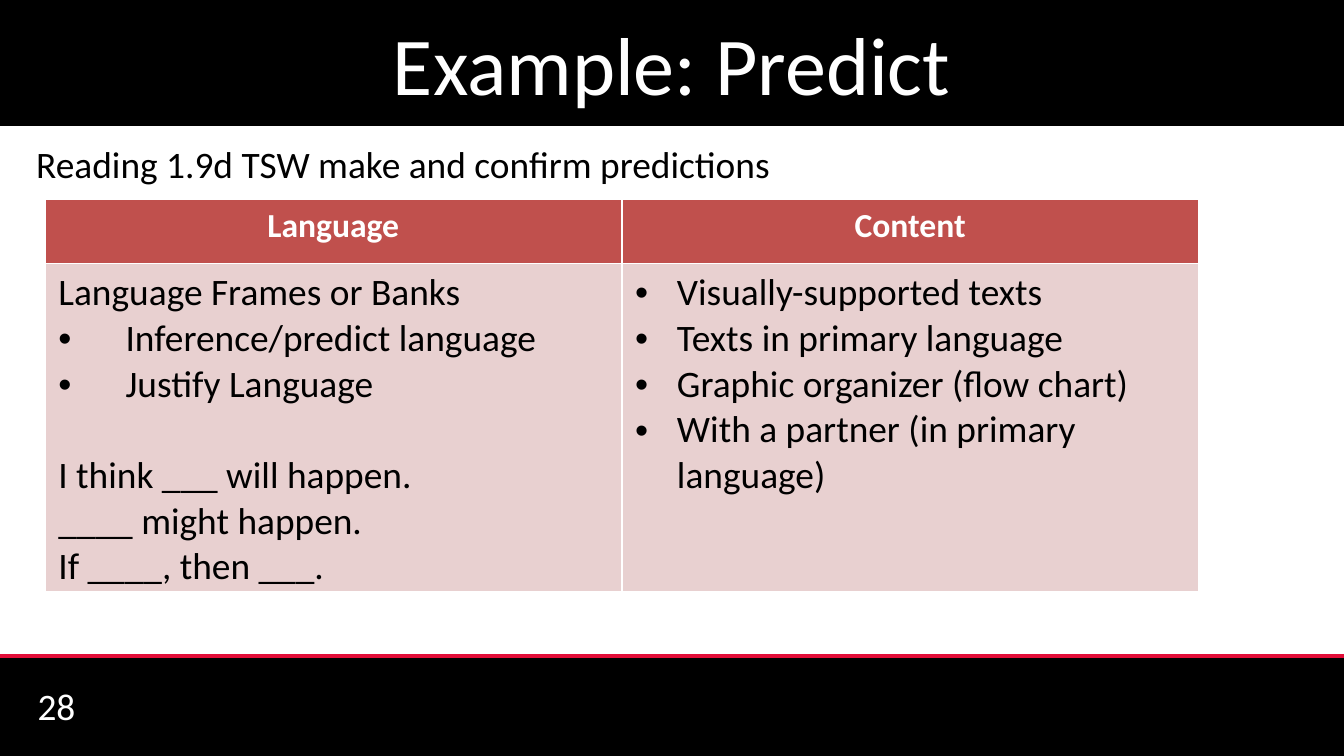
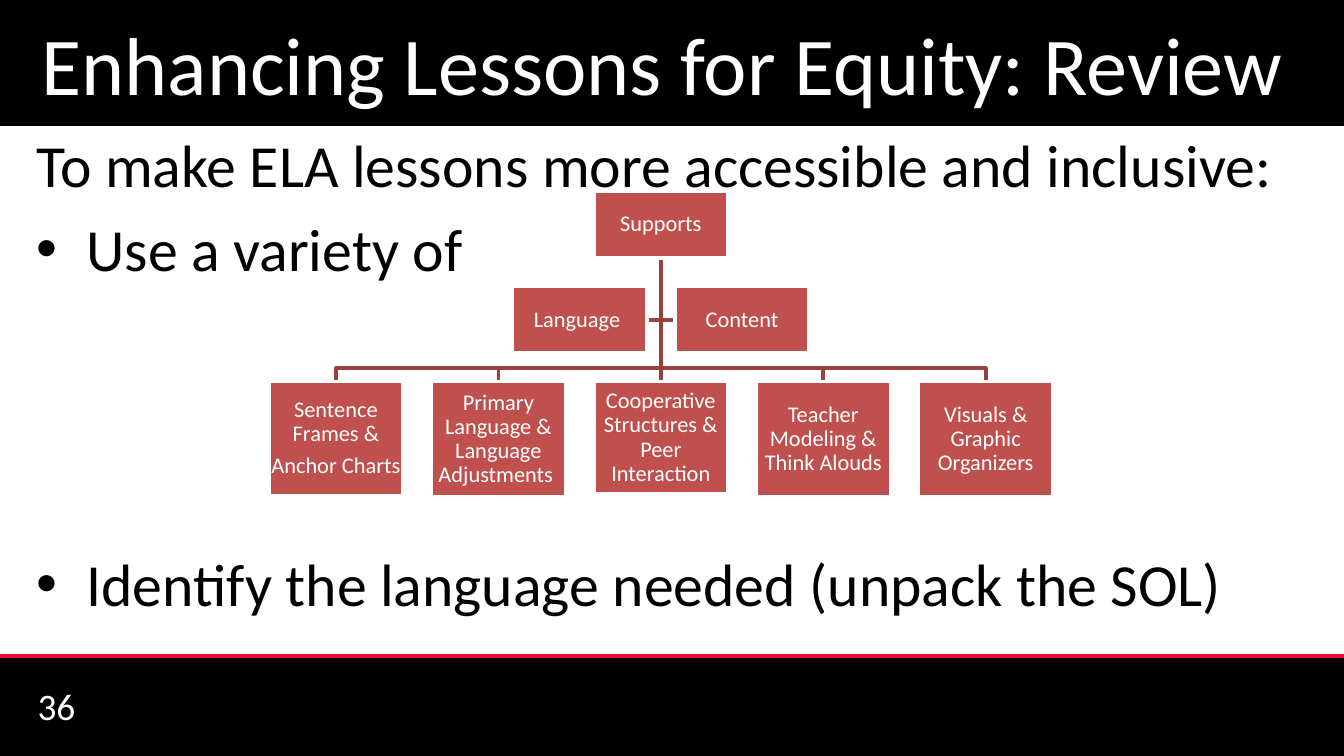
from lxml import etree
from pptx import Presentation
from pptx.dml.color import RGBColor
from pptx.enum.shapes import MSO_CONNECTOR as LINE, MSO_SHAPE as SHAPE
from pptx.enum.text import MSO_ANCHOR as ANCHOR, MSO_AUTO_SIZE as FIT, PP_ALIGN as ALIGN
from pptx.oxml.ns import qn
from pptx.util import Cm, Pt

BLACK, WHITE, RED = "000000", "FFFFFF", "E20D38"
BRICK, ROSE, RUST = "C0504D", "E8D0D0", "9A403E"
FONT = "Calibri"
WIDE, HIGH = Cm(25.4), Cm(14.29)
rgb = RGBColor.from_string


def write(frame, items, size, color, align=ALIGN.LEFT, bold=False):
    """Each item is (text, bullet indent in cm or 0, points of space before)."""
    frame.text = "\n".join(text for text, _, _ in items)
    for par, (_, indent, before) in zip(frame.paragraphs, items):
        props = par._p.get_or_add_pPr()
        props.set("marL", str(Cm(indent)))
        props.set("indent", str(-Cm(indent)))
        if indent:
            etree.SubElement(props, qn("a:buFont")).set("typeface", "Arial")
            etree.SubElement(props, qn("a:buChar")).set("char", "•")
        else:
            etree.SubElement(props, qn("a:buNone"))
        par.alignment = align
        par.space_before = Pt(before)
        for run in par.runs:
            font = run.font
            font.name, font.size, font.bold = FONT, Pt(size), bold
            font.color.rgb = rgb(color)


def block(slide, left, top, width, height, color):
    rect = slide.shapes.add_shape(SHAPE.RECTANGLE, left, top, width, height)
    rect.shadow.inherit = False
    rect.fill.solid()
    rect.fill.fore_color.rgb = rgb(color)
    rect.line.fill.background()
    return rect


deck = Presentation()
deck.slide_width, deck.slide_height = WIDE, HIGH

# Title, number, body size, body top and height in cm, body items
pages = [
    ("Example: Predict", "28", 20, 2.54, 1.22,
     [("Reading 1.9d TSW make and confirm predictions", 0, 0)]),
    ("Enhancing Lessons for Equity: Review ", "36", 32, 2.29, 9.73,
     [("To make ELA lessons more accessible and inclusive:", 0, 0),
      ("Use a variety of", 0.95, 6.4),
      ("Identify the language needed (unpack the SOL)", 0.95, 141.4)]),
]
slides = []
for name, number, size, top, height, items in pages:
    slide = deck.slides.add_slide(deck.slide_layouts[1])
    slides.append(slide)

    title, body = slide.placeholders
    title.left, title.top, title.width, title.height = 0, 0, WIDE, Cm(2.38)
    title.fill.solid()
    title.fill.fore_color.rgb = rgb(BLACK)
    title.text_frame.auto_size = FIT.NONE
    write(title.text_frame, [(name, 0, 0)], 44, WHITE, ALIGN.CENTER)

    body.left, body.top = Cm(0.43), Cm(top)
    body.width, body.height = Cm(24.56), Cm(height)
    body.text_frame.auto_size = FIT.NONE
    write(body.text_frame, items, size, BLACK)

    base = Cm(12.4)
    block(slide, 0, base, WIDE, HIGH - base, BLACK)
    rule = slide.shapes.add_connector(LINE.STRAIGHT, 0, base, WIDE, base)
    rule.line.color.rgb = rgb(RED)
    rule.line.width = Pt(2)
    etree.SubElement(rule._element.spPr, qn("a:effectLst"))

    label = slide.shapes.add_textbox(Cm(0.46), Cm(12.95), Cm(5.92), Cm(0.76))
    label.text_frame.word_wrap = True
    label.text_frame.vertical_anchor = ANCHOR.MIDDLE
    write(label.text_frame, [(number, 0, 0)], 20, WHITE)

predict, review = slides

# Table of language and content supports
table = predict.shapes.add_table(2, 2, Cm(0.85), Cm(3.76), Cm(21.8), Cm(7.19)).table
table.horz_banding = False
table.rows[0].height, table.rows[1].height = Cm(1.22), Cm(5.97)
columns = [
    ("Language", [
        ("Language Frames or Banks", 0, 0),
        ("Inference/predict language", 1.27, 0),
        ("Justify Language", 1.27, 0),
        ("I think ___ will happen.", 0, 24.4),
        ("____ might happen.", 0, 0),
        ("If ____, then ___.", 0, 0)]),
    ("Content", [
        ("Visually-supported texts", 0.79, 0),
        ("Texts in primary language", 0.79, 0),
        ("Graphic organizer (flow chart)", 0.79, 0),
        ("With a partner (in primary language)", 0.79, 0)]),
]
for col, (head, items) in enumerate(columns):
    top, cell = table.cell(0, col), table.cell(1, col)
    for part, color in ((top, BRICK), (cell, ROSE)):
        part.fill.solid()
        part.fill.fore_color.rgb = rgb(color)
    write(top.text_frame, [(head, 0, 0)], 18, WHITE, ALIGN.CENTER, True)
    write(cell.text_frame, items, 20, BLACK)

# Chart of supports: root, two sides, five leaves
MID, STEP, BOX = Cm(12.49), Cm(3.07), Cm(2.54)
ROOT, SIDE, LEAF, LOW = Cm(3.61), Cm(5.41), Cm(7.21), Cm(1.27)
FOOT, BUS, ARM = ROOT + LOW, Cm(6.96), SIDE + LOW // 2
leaves = [
    ("Sentence Frames &\nAnchor Charts", 2.16),
    ("Primary Language & Language Adjustments ", 2.18),
    ("Cooperative Structures & Peer Interaction", 2.13),
    ("Teacher Modeling & Think Alouds", 2.18),
    ("Visuals & Graphic Organizers", 2.18),
]
nodes = [("Supports", MID, ROOT, LOW),
         ("Language ", MID - STEP // 2, SIDE, LOW),
         ("Content", MID + STEP // 2, SIDE, LOW)]
gap = (STEP - BOX) // 2
links = [[(MID, ARM), (MID + gap, ARM)], [(MID, ARM), (MID - gap, ARM)]]
for i, (text, height) in enumerate(leaves):
    x = MID + (i - 2) * STEP
    nodes.append((text, x, LEAF, Cm(height)))
    links.append([(MID, LEAF)] if x == MID else [(MID, BUS), (x, BUS), (x, LEAF)])

for points in links:
    pen = review.shapes.build_freeform(MID, FOOT)
    pen.add_line_segments(points, close=False)
    link = pen.convert_to_shape()
    link.shadow.inherit = False
    link.fill.background()
    link.line.color.rgb = rgb(RUST)
    link.line.width = Pt(2)

for text, x, top, height in nodes:
    node = block(review, x - BOX // 2, top, BOX, height, BRICK)
    node.line.color.rgb = rgb(WHITE)
    node.line.width = Pt(2)
    frame = node.text_frame
    frame.word_wrap = True
    frame.vertical_anchor = ANCHOR.MIDDLE
    frame.margin_left = frame.margin_right = Cm(0.02)
    frame.margin_top = frame.margin_bottom = Cm(0.02)
    write(frame, [(line, 0, 0) for line in text.split("\n")], 12, WHITE, ALIGN.CENTER)
    for par in frame.paragraphs:
        par.line_spacing = 0.9
        par.space_after = Pt(4.2)

deck.save("out.pptx")
